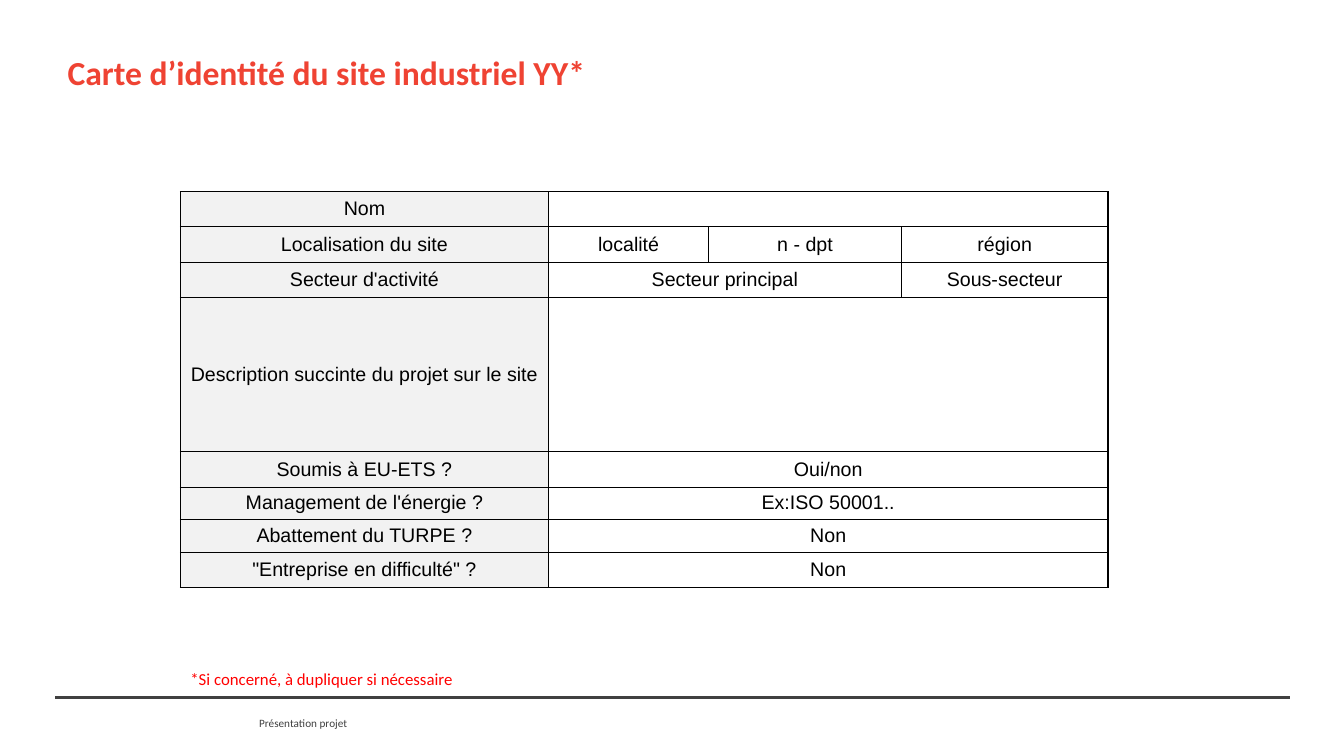
from lxml import etree
from pptx import Presentation
from pptx.dml.color import RGBColor
from pptx.enum import shapes, text
from pptx.oxml import ns
from pptx.util import Inches, Pt

RED = RGBColor(0xEF, 0x43, 0x33)
NOTE_RED = RGBColor(0xFF, 0x00, 0x00)
BLACK = RGBColor(0x00, 0x00, 0x00)
GREY = RGBColor(0x40, 0x40, 0x40)
LABEL_FILL = RGBColor(0xF2, 0xF2, 0xF2)

COL_WIDTHS = [3.65, 1.59, 1.91, 2.05]
# Each row: height, label, then (value, columns spanned)
ROWS = [
    (0.35, "Nom", [("", 3)]),
    (0.35, "Localisation du site", [("localité", 1), ("n - dpt", 1), ("région", 1)]),
    (0.35, "Secteur d'activité", [("Secteur principal", 2), ("Sous-secteur", 1)]),
    (1.53, "Description succinte du projet sur le site", [("", 3)]),
    (0.35, "Soumis à EU-ETS ?", [("Oui/non", 3)]),
    (0.32, "Management de l'énergie ?", [("Ex:ISO 50001..", 3)]),
    (0.33, "Abattement du TURPE ?", [("Non", 3)]),
    (0.35, "\"Entreprise en difficulté\" ?", [("Non", 3)]),
]


def add_run(p, words, size, font, color, bold=False):
    r = p.add_run()
    r.text = words
    r.font.size = Pt(size)
    r.font.name = font
    r.font.bold = bold
    r.font.color.rgb = color


def add_text(s, box, words, size, color, bold=False, margins=(0.1, 0.05),
             anchor=text.MSO_ANCHOR.TOP, wrap=True):
    tf = s.shapes.add_textbox(*map(Inches, box)).text_frame
    tf.word_wrap = wrap
    tf.vertical_anchor = anchor
    tf.margin_left = tf.margin_right = Inches(margins[0])
    tf.margin_top = tf.margin_bottom = Inches(margins[1])
    add_run(tf.paragraphs[0], words, size, "Calibri", color, bold)


def set_borders(cell, widths):
    tc_pr = cell._tc.get_or_add_tcPr()
    for side, width in widths.items():
        ln = etree.SubElement(tc_pr, ns.qn(f"a:ln{side}"), w=str(Pt(width)))
        fill = etree.SubElement(ln, ns.qn("a:solidFill"))
        etree.SubElement(fill, ns.qn("a:srgbClr"), val=str(BLACK))


def add_title(s, box):
    add_text(s, box, "Carte d’identité du site industriel YY*", 24, RED, bold=True,
             margins=(0, 0.05), anchor=text.MSO_ANCHOR.MIDDLE)


def add_identity_table(s, left, top):
    n_rows, n_cols = len(ROWS), len(COL_WIDTHS)
    height = sum(row[0] for row in ROWS)
    table = s.shapes.add_table(n_rows, n_cols, Inches(left), Inches(top),
                               Inches(sum(COL_WIDTHS)), Inches(height)).table
    table.first_row = table.horz_banding = False
    for col, width in zip(table.columns, COL_WIDTHS):
        col.width = Inches(width)

    # Labels and values, merged across their columns
    for i, (row_height, label, values) in enumerate(ROWS):
        table.rows[i].height = Inches(row_height)
        j = 0
        for words, span in [(label, 1)] + values:
            cell = table.cell(i, j)
            if span > 1:
                cell.merge(table.cell(i, j + span - 1))
            p = cell.text_frame.paragraphs[0]
            p.alignment = text.PP_ALIGN.CENTER
            if words:
                add_run(p, words, 14, "Arial", BLACK)
            j += span

    # Thin inner grid, thicker left, right and bottom edges
    for i in range(n_rows):
        for j in range(n_cols):
            cell = table.cell(i, j)
            end = j + (cell.span_width if cell.is_merge_origin else 1)
            cell.vertical_anchor = text.MSO_ANCHOR.MIDDLE
            cell.margin_left = cell.margin_right = 0
            cell.margin_top = cell.margin_bottom = 0
            set_borders(cell, {"L": 1 if j == 0 else 0.5,
                               "R": 1 if end == n_cols else 0.5,
                               "T": 0.5,
                               "B": 1 if i == n_rows - 1 else 0.5})
            if j == 0:
                cell.fill.solid()
                cell.fill.fore_color.rgb = LABEL_FILL
            else:
                cell.fill.background()


def add_footer(s, left, top, width):
    y = Inches(top)
    rule = s.shapes.add_connector(shapes.MSO_CONNECTOR.STRAIGHT,
                                  Inches(left), y, Inches(left + width), y)
    rule.line.color.rgb = GREY
    rule.line.width = Pt(1.5)
    etree.SubElement(rule._element.spPr, ns.qn("a:effectLst"))
    add_text(s, (left + 2.02, top + 0.19, 0.88, 0.13), "Présentation projet", 8, GREY,
             margins=(0, 0), wrap=False)


def build_site_slide(prs):
    s = prs.slides.add_slide(prs.slide_layouts[6])
    add_footer(s, 0.55, 6.92, 12.24)
    add_title(s, (0.67, 0.3, 12, 0.84))
    add_identity_table(s, 1.79, 1.9)
    # Footnote
    add_text(s, (1.79, 6.59, 5.16, 0.3), "*Si concerné, à dupliquer si nécessaire",
             12, NOTE_RED)


def main():
    prs = Presentation()
    prs.slide_width, prs.slide_height = Inches(13.33), Inches(7.5)
    build_site_slide(prs)
    prs.save("out.pptx")


if __name__ == "__main__":
    main()
